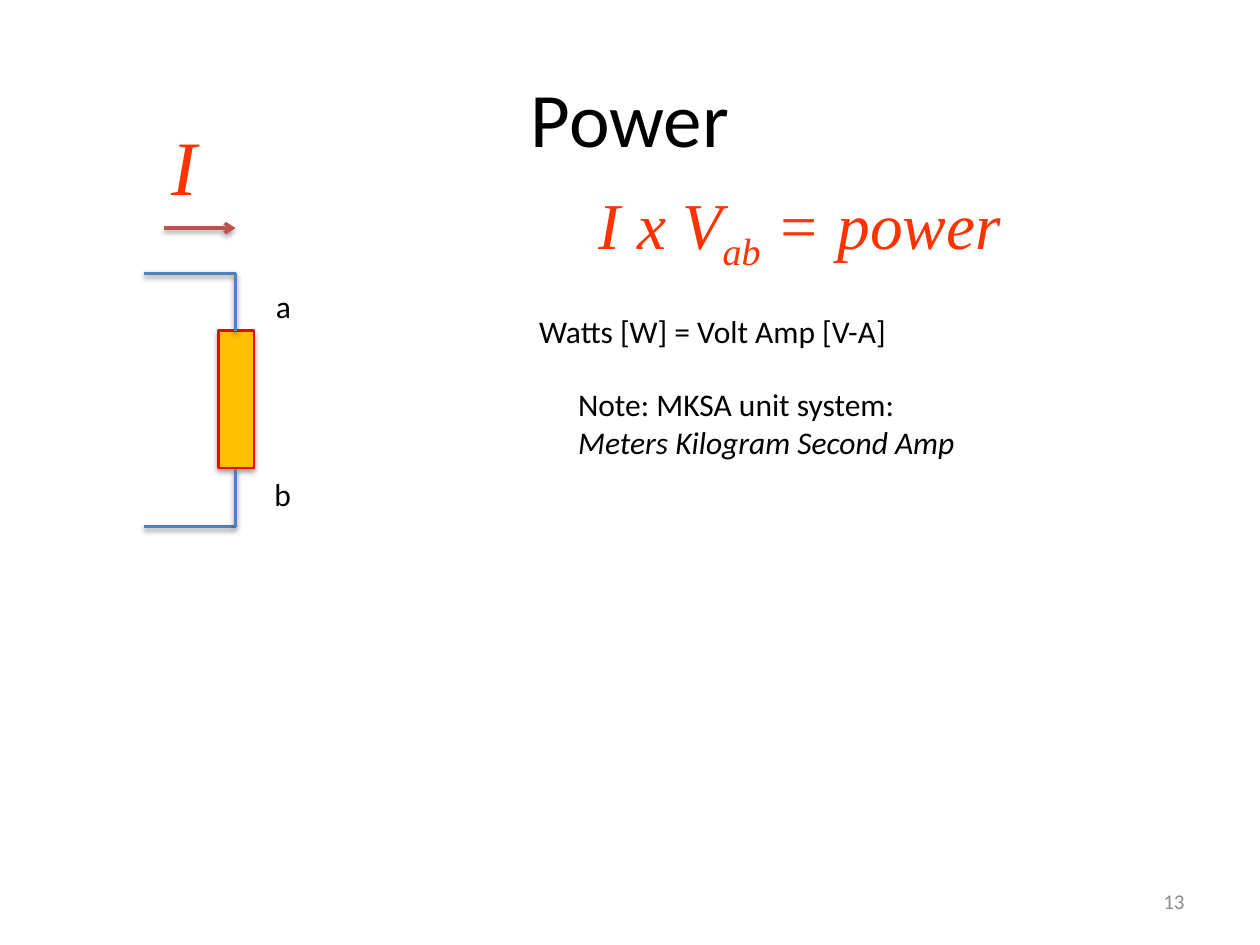
"""Build the slide on electric power in a circuit element."""
import lxml.etree
import pptx
import pptx.dml.color
import pptx.enum.shapes
import pptx.enum.text
import pptx.oxml.ns
import pptx.util

Inches = pptx.util.Inches
Pt = pptx.util.Pt
RGBColor = pptx.dml.color.RGBColor
Align = pptx.enum.text.PP_ALIGN
Anchor = pptx.enum.text.MSO_ANCHOR
qn = pptx.oxml.ns.qn

BLACK = RGBColor(0x00, 0x00, 0x00)
GREY = RGBColor(0x8C, 0x8C, 0x8C)
ORANGE = RGBColor(0xFF, 0x33, 0x00)
AMBER = RGBColor(0xFF, 0xC0, 0x00)
RED = RGBColor(0xFF, 0x00, 0x00)
WIRE_BLUE = RGBColor(0x4F, 0x81, 0xBD)
ARROW_RED = RGBColor(0xC0, 0x50, 0x4D)
BODY_FONT = "Calibri"
MATH_FONT = "Times New Roman"


class SlideBuilder:
    def __init__(self, page):
        self.page = page

    def place(self, shape, area):
        shape.left, shape.top, shape.width, shape.height = map(Inches, area)

    def add_span(self, para, text, size, color=BLACK, font=BODY_FONT, italic=False, baseline=0):
        span = para.add_run()
        span.text = text
        span.font.name = font
        span.font.size = Pt(size)
        span.font.color.rgb = color
        span.font.italic = italic
        if baseline:
            span._r.get_or_add_rPr().set("baseline", str(baseline * 1000))

    def title(self, area, text):
        box = self.page.shapes.title
        self.place(box, area)
        box.text_frame.vertical_anchor = Anchor.MIDDLE
        para = box.text_frame.paragraphs[0]
        para.alignment = Align.CENTER
        self.add_span(para, text, 44)

    def text_box(self, area, align=Align.CENTER):
        box = self.page.shapes.add_textbox(*map(Inches, area))
        box.text_frame.word_wrap = True
        box.text_frame.vertical_anchor = Anchor.MIDDLE
        para = box.text_frame.paragraphs[0]
        para.alignment = align
        return para

    def label(self, area, text, second_line=None):
        box = self.page.shapes.add_textbox(*map(Inches, area))
        box.text_frame.word_wrap = False
        box.text_frame.auto_size = pptx.enum.text.MSO_AUTO_SIZE.SHAPE_TO_FIT_TEXT
        para = box.text_frame.paragraphs[0]
        self.add_span(para, text, 18)
        if second_line:
            para.add_line_break()
            self.add_span(para, second_line, 18, italic=True)

    def shadow(self, shape, distance, opacity):
        properties = shape._element.spPr
        effects = properties.find(qn("a:effectLst"))
        if effects is None:
            effects = lxml.etree.SubElement(properties, qn("a:effectLst"))
        outer = lxml.etree.SubElement(
            effects, qn("a:outerShdw"), blurRad=str(Pt(3.1)), dist=str(Pt(distance)),
            dir="5400000", rotWithShape="0")
        color = lxml.etree.SubElement(outer, qn("a:srgbClr"), val=str(BLACK))
        lxml.etree.SubElement(color, qn("a:alpha"), val=str(opacity * 1000))

    def resistor(self, shapes, area):
        shape = shapes.add_shape(pptx.enum.shapes.MSO_SHAPE.RECTANGLE, *map(Inches, area))
        shape.rotation = 90
        shape.fill.solid()
        shape.fill.fore_color.rgb = AMBER
        shape.line.color.rgb = RED
        shape.line.width = Pt(1.5)
        shape.shadow.inherit = False
        self.shadow(shape, 1.8, 35)

    def line(self, shapes, points, color, arrow=False):
        line = shapes.add_connector(
            pptx.enum.shapes.MSO_CONNECTOR.STRAIGHT, *map(Inches, points))
        line.line.color.rgb = color
        line.line.width = Pt(2)
        if arrow:
            outline = line._element.spPr.find(qn("a:ln"))
            lxml.etree.SubElement(outline, qn("a:tailEnd"), type="arrow")
        self.shadow(line, 1.6, 38)


def main():
    deck = pptx.Presentation()
    deck.slide_width = Inches(10)
    deck.slide_height = Inches(7.5)
    page = deck.slides.add_slide(deck.slide_layouts[5])
    slide = SlideBuilder(page)

    slide.title((0.5, 0.3, 9, 1.25), "Power")
    slide.label((2.09, 2.23, 0.32, 0.4), "a")
    slide.label((2.08, 3.72, 0.34, 0.4), "b")

    circuit = page.shapes.add_group_shape().shapes
    slide.resistor(circuit, (1.33, 3.03, 1.09, 0.28))
    wire_left, wire_right = 1.14, 1.87
    for outer, inner in ((4.18, 3.72), (2.17, 2.63)):
        slide.line(circuit, (wire_left, outer, wire_right, outer), WIRE_BLUE)
        slide.line(circuit, (wire_right, outer, wire_right, inner), WIRE_BLUE)
    slide.line(page.shapes, (1.3, 1.81, wire_right, 1.81), ARROW_RED, arrow=True)

    current = slide.text_box((0.84, 0.8, 1.25, 1.01))
    slide.add_span(current, "I", 44, ORANGE, MATH_FONT, italic=True)
    formula = slide.text_box((4.49, 1.31, 3.72, 1.01))
    for text, baseline in (("I x V", 0), ("ab", -25), (" = power", 0)):
        slide.add_span(formula, text, 37.4, ORANGE, MATH_FONT, True, baseline)

    slide.label((4.18, 2.43, 3, 0.4), "Watts [W] = Volt Amp [V-A]")
    slide.label((4.49, 3.01, 3.24, 0.71), "Note: MKSA unit system:", "Meters Kilogram Second Amp")
    number = slide.text_box((7.17, 6.95, 2.33, 0.4), Align.RIGHT)
    slide.add_span(number, "13", 12, GREY)
    deck.save("out.pptx")


if __name__ == "__main__":
    main()
